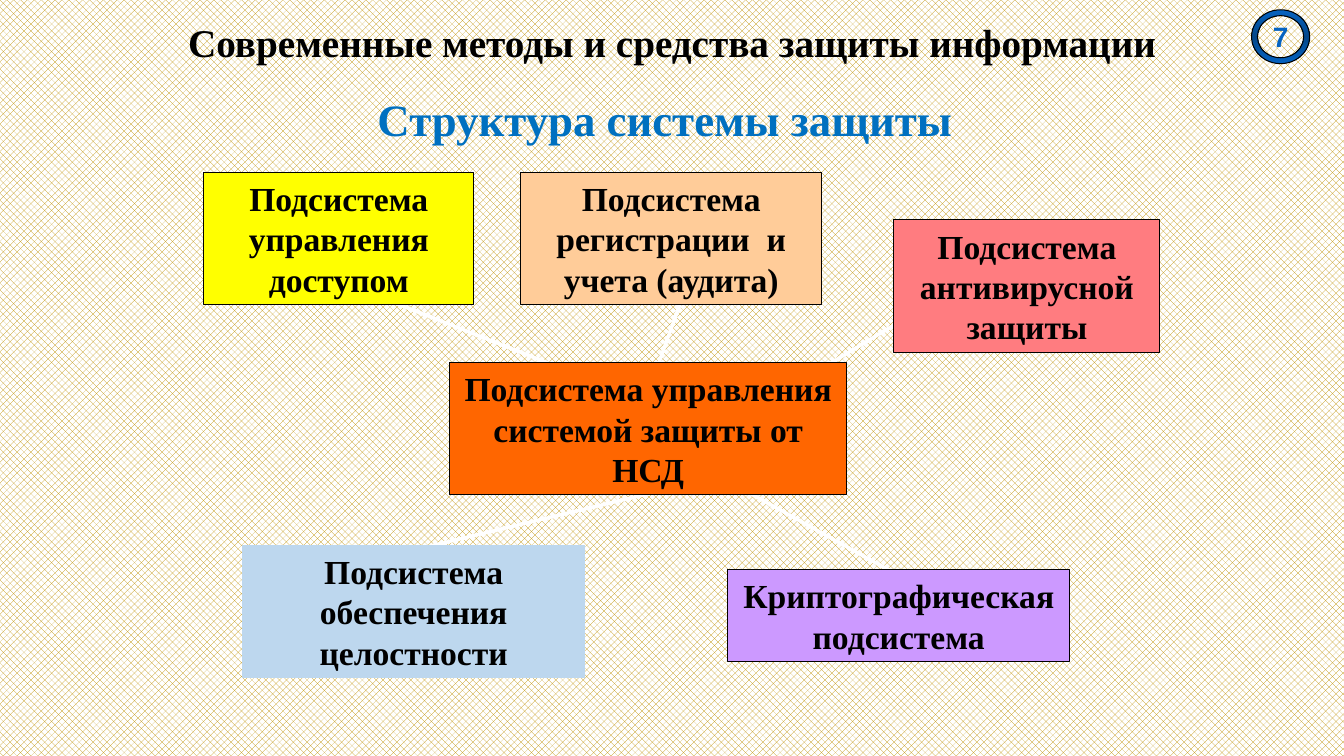
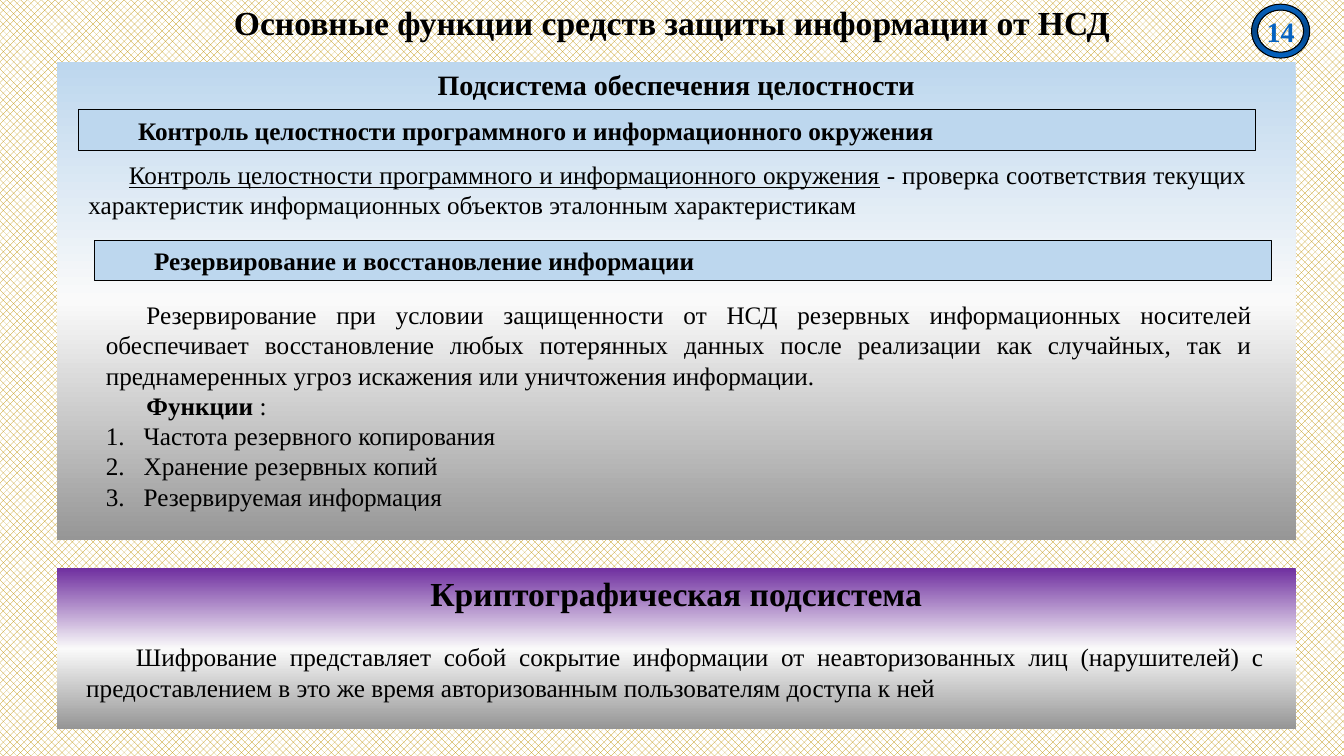
"""Build two slides on information protection: system structure and functions."""
from dataclasses import dataclass

from lxml import etree
from pptx import Presentation
from pptx.dml.color import RGBColor
from pptx.enum.dml import MSO_PATTERN
from pptx.enum.shapes import MSO_CONNECTOR, MSO_SHAPE
from pptx.enum.text import MSO_ANCHOR, MSO_AUTO_SIZE, PP_ALIGN
from pptx.oxml.ns import qn
from pptx.util import Pt

RECTANGLE, DONUT = MSO_SHAPE.RECTANGLE, MSO_SHAPE.DONUT
STRAIGHT = MSO_CONNECTOR.STRAIGHT
TOP, MIDDLE = MSO_ANCHOR.TOP, MSO_ANCHOR.MIDDLE
LEFT, CENTER, JUSTIFY = PP_ALIGN.LEFT, PP_ALIGN.CENTER, PP_ALIGN.JUSTIFY


@dataclass(frozen=True)
class Theme:
    """Colours, fonts and type sizes shared by the slides."""
    serif: str = "Times New Roman"
    sans: str = "Arial"
    black: str = "000000"
    white: str = "FFFFFF"
    hatch: str = "BF9000"
    heading: str = "0070C0"
    badge: str = "0563C1"
    badge_dark: str = "04478A"
    pale_blue: str = "BDD7EE"
    violet: str = "7030A0"
    middle_stop: str = "FAFAFA"
    end_stop: str = "969696"
    heading_size: int = 32
    box_size: int = 24
    panel_size: int = 20
    badge_size: int = 20
    body_size: int = 18
    outline: float = 0.75
    link: float = 2.5


THEME = Theme()

STRUCTURE = {
    "title": ("Современные методы и средства защиты информации", 28, 11.5),
    "badge": ("7", THEME.sans, 7),
    "heading": ("Структура системы защиты", (260.5, 62, 429, 46)),
    "links": [
        ((531.5, 350), (644.5, 412.5)),
        ((707, 191), (565, 276.5)),
        ((309.5, 389.5), (474.5, 350)),
        ((276, 214), (406, 265)),
        ((491, 202.5), (468.5, 265)),
    ],
    "boxes": [
        ("Криптографическая подсистема", (520, 407, 244, 65.5), "CC99FF", THEME.black),
        ("Подсистема управления доступом", (145.5, 123, 193, 94.5), "FFFF00", THEME.black),
        ("Подсистема регистрации  и учета (аудита)", (372, 123, 215, 94.5), "FFCC99", THEME.black),
        ("Подсистема обеспечения целостности", (173.5, 389.5, 244, 94.5),
         THEME.pale_blue, THEME.pale_blue),
        ("Подсистема антивирусной защиты", (638.5, 157, 190, 94.5), "FF7C80", THEME.black),
        ("Подсистема управления системой защиты от НСД", (321, 259, 284, 94.5),
         "FF6600", THEME.black),
    ],
}

FUNCTIONS = {
    "title": ("Основные функции средств защиты информации от НСД", 24, -3),
    "badge": ("14", THEME.serif, 3),
    "panels": [
        ("Подсистема обеспечения целостности", (40.5, 44.5, 885, 341.5),
         THEME.pale_blue, THEME.panel_size),
        ("Криптографическая подсистема", (40.5, 406, 885, 114.5),
         THEME.violet, THEME.box_size),
    ],
    "bars": [
        ("Контроль целостности программного и информационного окружения", (56, 78.5, 841, 29)),
        ("Резервирование и восстановление информации", (67.5, 171.5, 841, 29)),
    ],
    "texts": [
        ((56, 110, 841, 51), 29, [
            [("Контроль целостности программного и информационного окружения", "underline"),
             (" - проверка соответствия текущих характеристик информационных объектов "
              "эталонным характеристикам", None)],
        ], []),
        ((68.5, 209.5, 833, 160), 29, [
            [("Резервирование при условии защищенности от НСД резервных информационных "
              "носителей обеспечивает восстановление любых потерянных данных после "
              "реализации как случайных, так и преднамеренных угроз искажения или "
              "уничтожения информации.", None)],
            [("Функции ", "bold"), (":", None)],
        ], ["Частота резервного копирования", "Хранение резервных копий",
            "Резервируемая информация"]),
        ((54.5, 454.5, 855.5, 51), 35.5, [
            [("Шифрование представляет собой сокрытие информации от неавторизованных лиц "
              "(нарушителей) с предоставлением в это же время авторизованным пользователям "
              "доступа к ней", None)],
        ], []),
    ],
}


def rgb(value):
    """Return the colour for a hex string."""
    return RGBColor.from_string(value)


def points(values):
    """Convert numbers to point lengths."""
    return [Pt(value) for value in values]


def style(paragraph, size, color=THEME.black, bold=True, align=CENTER, name=THEME.serif):
    """Set the font and alignment of a paragraph."""
    paragraph.alignment = align
    font = paragraph.font
    font.name, font.size, font.bold = name, Pt(size), bold
    font.color.rgb = rgb(color)


def indent(paragraph, first, left=0):
    """Set the left margin and first-line indent of a paragraph."""
    properties = paragraph._p.get_or_add_pPr()
    properties.set("marL", str(Pt(left)))
    properties.set("indent", str(Pt(first)))


def number(paragraph):
    """Make a paragraph an item of a numbered list."""
    indent(paragraph, -27, 27)
    properties = paragraph._p.get_or_add_pPr()
    bullet = etree.Element(qn("a:buAutoNum"), type="arabicPeriod")
    properties.insert(0, bullet)


def fill_gradient(shape, colors):
    """Fill a shape from top to bottom with evenly spaced colours."""
    shape.fill.gradient()
    shape.fill.gradient_angle = 270
    stops = shape._element.spPr.find(qn("a:gradFill")).find(qn("a:gsLst"))
    for stop in list(stops):
        stops.remove(stop)
    for index, color in enumerate(colors):
        position = index * 100000 // (len(colors) - 1)
        stop = etree.SubElement(stops, qn("a:gs"), pos=str(position))
        etree.SubElement(stop, qn("a:srgbClr"), val=color)


def add_shape(slide, kind, area, fill, outline=None):
    """Add a shape with a plain fill, or a gradient for a list of colours."""
    shape = slide.shapes.add_shape(kind, *points(area))
    shape.shadow.inherit = False
    if isinstance(fill, str):
        shape.fill.solid()
        shape.fill.fore_color.rgb = rgb(fill)
    else:
        fill_gradient(shape, fill)
    if outline:
        shape.line.color.rgb = rgb(outline)
        shape.line.width = Pt(THEME.outline)
    else:
        shape.line.fill.background()
    return shape


def write(shape, text, size, anchor=MIDDLE, **options):
    """Put one styled paragraph into a shape and return it."""
    frame = shape.text_frame
    frame.word_wrap = True
    frame.vertical_anchor = anchor
    paragraph = frame.paragraphs[0]
    paragraph.text = text
    style(paragraph, size, **options)
    return paragraph


def add_badge(slide, text, name, top):
    """Add the ring with the slide number."""
    ring = add_shape(slide, DONUT, (894, top, 41.5, 38.5),
                     (THEME.badge, THEME.badge_dark, THEME.badge), THEME.black)
    ring.adjustments[0] = 0.11
    write(ring, text, THEME.badge_size, color=THEME.badge, name=name)
    frame = ring.text_frame
    frame.word_wrap = False
    frame.margin_left = frame.margin_right = frame.margin_top = frame.margin_bottom = 0


def start_slide(presentation, content):
    """Add a slide with the hatched background, title and badge."""
    slide = presentation.slides.add_slide(presentation.slide_layouts[5])
    background = slide.background.fill
    background.patterned()
    background.pattern = MSO_PATTERN.PERCENT_50
    background.fore_color.rgb = rgb(THEME.hatch)
    background.back_color.rgb = rgb(THEME.white)
    text, size, top = content["title"]
    title = slide.shapes.title
    title.left, title.top, title.width, title.height = points((66, top, 828, 41))
    paragraph = write(title, text, size)
    paragraph.line_spacing = 0.9
    title.text_frame.auto_size = MSO_AUTO_SIZE.NONE
    add_badge(slide, *content["badge"])
    return slide


def add_link(slide, start, end):
    """Add a plain line between two points."""
    link = slide.shapes.add_connector(STRAIGHT, *points(start + end))
    link.line.color.rgb = rgb(THEME.white)
    link.line.width = Pt(THEME.link)
    etree.SubElement(link._element.spPr, qn("a:effectLst"))


def add_body(slide, area, first_indent, paragraphs, items):
    """Add justified text followed by numbered items."""
    frame = slide.shapes.add_textbox(*points(area)).text_frame
    frame.word_wrap = True
    frame.vertical_anchor = MIDDLE
    rows = paragraphs + [[(item, None)] for item in items]
    for index, runs in enumerate(rows):
        paragraph = frame.add_paragraph() if index else frame.paragraphs[0]
        style(paragraph, THEME.body_size, bold=False, align=JUSTIFY)
        if index < len(paragraphs):
            indent(paragraph, first_indent)
        else:
            number(paragraph)
        for text, emphasis in runs:
            run = paragraph.add_run()
            run.text = text
            if emphasis:
                setattr(run.font, emphasis, True)


def build_structure(presentation):
    """Build the slide with the diagram of subsystems."""
    slide = start_slide(presentation, STRUCTURE)
    for start, end in STRUCTURE["links"]:
        add_link(slide, start, end)
    for text, area, fill, outline in STRUCTURE["boxes"]:
        write(add_shape(slide, RECTANGLE, area, fill, outline), text, THEME.box_size)
    text, area = STRUCTURE["heading"]
    heading = slide.shapes.add_textbox(*points(area))
    write(heading, text, THEME.heading_size, anchor=TOP, color=THEME.heading)


def build_functions(presentation):
    """Build the slide with the functions of two subsystems."""
    slide = start_slide(presentation, FUNCTIONS)
    for text, area, color, size in FUNCTIONS["panels"]:
        panel = add_shape(slide, RECTANGLE, area, (color, THEME.middle_stop, THEME.end_stop))
        write(panel, text, size, anchor=TOP)
    for text, area in FUNCTIONS["bars"]:
        bar = add_shape(slide, RECTANGLE, area, THEME.pale_blue, THEME.black)
        indent(write(bar, text, THEME.body_size, align=LEFT), 35.5)
    for body in FUNCTIONS["texts"]:
        add_body(slide, *body)


def main():
    """Build and save the presentation."""
    presentation = Presentation()
    presentation.slide_width, presentation.slide_height = Pt(960), Pt(540)
    build_structure(presentation)
    build_functions(presentation)
    presentation.save("out.pptx")


if __name__ == "__main__":
    main()
